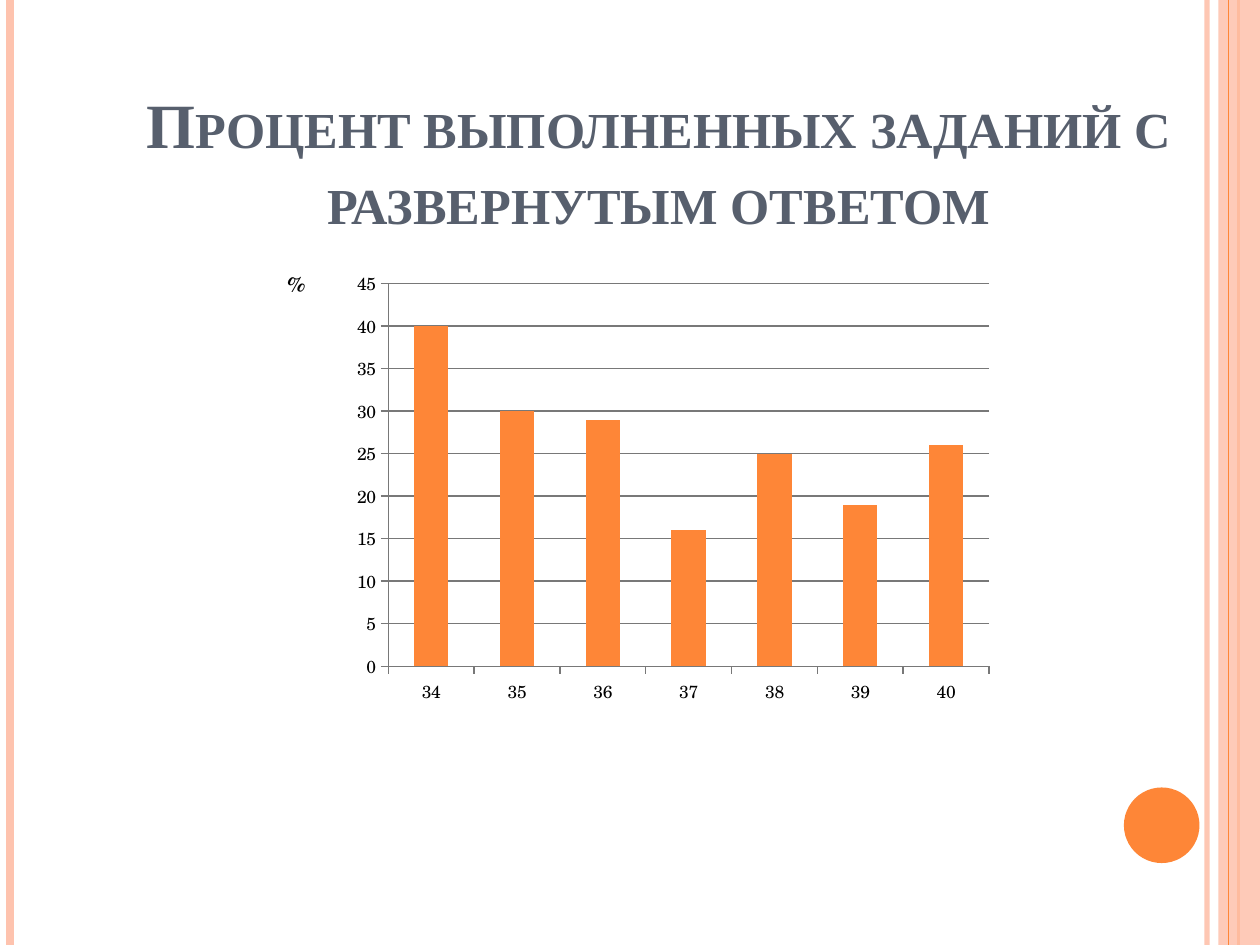
from pptx import Presentation
from pptx.chart.data import CategoryChartData
from pptx.dml.color import RGBColor
from pptx.enum.chart import XL_CHART_TYPE, XL_TICK_MARK
from pptx.enum.shapes import MSO_CONNECTOR, MSO_SHAPE
from pptx.enum.text import MSO_ANCHOR, PP_ALIGN
from pptx.oxml import parse_xml
from pptx.oxml.ns import nsdecls, qn
from pptx.util import Inches, Pt

COLUMN = XL_CHART_TYPE.COLUMN_CLUSTERED
OUT = XL_TICK_MARK.OUTSIDE
LINE, RECT, OVAL = MSO_CONNECTOR.STRAIGHT, MSO_SHAPE.RECTANGLE, MSO_SHAPE.OVAL
BOTTOM, CENTER = MSO_ANCHOR.BOTTOM, PP_ALIGN.CENTER

# Content
TITLE = "Процент выполненных заданий с развернутым ответом"
UNIT = "%"
SCORES = {"34": 40, "35": 30, "36": 29, "37": 16,
          "38": 25, "39": 19, "40": 26}


class Theme:
    pink = RGBColor.from_string("FEC3AE")
    orange = RGBColor.from_string("FE8637")
    slate = RGBColor.from_string("575F6D")
    gray = RGBColor.from_string("787878")
    black = RGBColor.from_string("000000")
    head_font, chart_font = "Times New Roman", "TeX Gyre Schola"
    head_size, unit_size, label_size = Pt(36), Pt(12), Pt(10)


WIDE, HIGH = 10, 7.5
# x, colour, width in points, opacity in percent
BACK_RULES = [(9.58, Theme.pink, 3, 93), (0.08, Theme.pink, 4.5, 100),
              (9.83, Theme.orange, 1.5, 100)]
FRONT_RULE = (9.75, Theme.orange, 0.75, 100)


def box(x, y, w, h):
    return [Inches(v) for v in (x, y, w, h)]


def fade(part, percent):
    if percent < 100:
        tint = next(part.iter(qn("a:srgbClr")))
        tint.append(parse_xml(
            f'<a:alpha {nsdecls("a")} val="{percent * 1000}"/>'))


def add_rule(slide, x, color, width, percent):
    rule = slide.shapes.add_connector(LINE, *box(x, 0, x, HIGH))
    rule.line.color.rgb = color
    rule.line.width = Pt(width)
    props = rule._element.spPr
    fade(props, percent)
    props.append(parse_xml(f'<a:effectLst {nsdecls("a")}/>'))


def add_block(slide, kind, area, color, percent=100):
    block = slide.shapes.add_shape(kind, *box(*area))
    block.shadow.inherit = False
    block.fill.solid()
    block.fill.fore_color.rgb = color
    block.line.fill.background()
    fade(block._element.spPr, percent)


def set_place(parent, index, **spots):
    """Give a chart part a manual layout, as fractions of the chart."""
    for old in parent.findall(qn("c:layout")):
        parent.remove(old)
    inner = '<c:layoutTarget val="inner"/>' if "w" in spots else ""
    modes = "".join(f'<c:{k}Mode val="edge"/>' for k in "xy")
    sizes = "".join(f'<c:{k} val="{v}"/>' for k, v in spots.items())
    parent.insert(index, parse_xml(
        f'<c:layout {nsdecls("c")}><c:manualLayout>{inner}{modes}{sizes}'
        '</c:manualLayout></c:layout>'))


def add_scores(slide):
    data = CategoryChartData()
    data.categories = list(SCORES)
    data.add_series(UNIT, list(SCORES.values()))
    chart = slide.shapes.add_chart(
        COLUMN, *box(2.01, 1.39, 6.54, 4.41), data).chart
    chart.has_legend = False
    chart.font.name = Theme.chart_font
    chart.font.size = Theme.label_size
    chart.font.color.rgb = Theme.black

    # Unit label
    chart.has_title = True
    run = chart.chart_title.text_frame.paragraphs[0].add_run()
    run.text = UNIT
    run.font.name = Theme.chart_font
    run.font.size = Theme.unit_size
    run.font.bold = True
    run.font.color.rgb = Theme.black
    set_place(chart.chart_title._element, 1, x=0.037, y=0.155)

    # Bars
    plot = chart.plots[0]
    plot.gap_width = 150
    plot.vary_by_categories = False
    fill = plot.series[0].format.fill
    fill.solid()
    fill.fore_color.rgb = Theme.orange

    # Axes and grid
    axis = chart.value_axis
    axis.minimum_scale, axis.maximum_scale, axis.major_unit = 0, 45, 5
    axis.has_major_gridlines = True
    lines = [axis.major_gridlines.format.line]
    for each in (axis, chart.category_axis):
        each.major_tick_mark = OUT
        lines.append(each.format.line)
    for line in lines:
        line.color.rgb = Theme.gray
        line.width = Pt(0.8)
    area = chart._chartSpace.find(".//" + qn("c:plotArea"))
    set_place(area, 0, x=0.164, y=0.195, w=0.729, h=0.689)


def add_title(slide):
    frame = slide.shapes.add_textbox(*box(0.98, 0.68, 8.5, 1.25)).text_frame
    frame.word_wrap = True
    frame.vertical_anchor = BOTTOM
    para = frame.paragraphs[0]
    para.alignment = CENTER
    run = para.add_run()
    run.text = TITLE
    run.font.name = Theme.head_font
    run.font.size = Theme.head_size
    run.font.bold = True
    run.font.color.rgb = Theme.slate
    run._r.get_or_add_rPr().set("cap", "small")


def main():
    deck = Presentation()
    deck.slide_width, deck.slide_height = Inches(WIDE), Inches(HIGH)
    slide = deck.slides.add_slide(deck.slide_layouts[6])

    # Side decoration
    for rule in BACK_RULES:
        add_rule(slide, *rule)
    add_block(slide, RECT, (9.67, 0, 0.33, HIGH), Theme.pink, 87)
    add_rule(slide, *FRONT_RULE)
    add_block(slide, OVAL, (8.92, 6.25, 0.6, 0.6), Theme.orange)

    # Chart and heading
    add_scores(slide)
    add_title(slide)
    deck.save("out.pptx")


if __name__ == "__main__":
    main()
